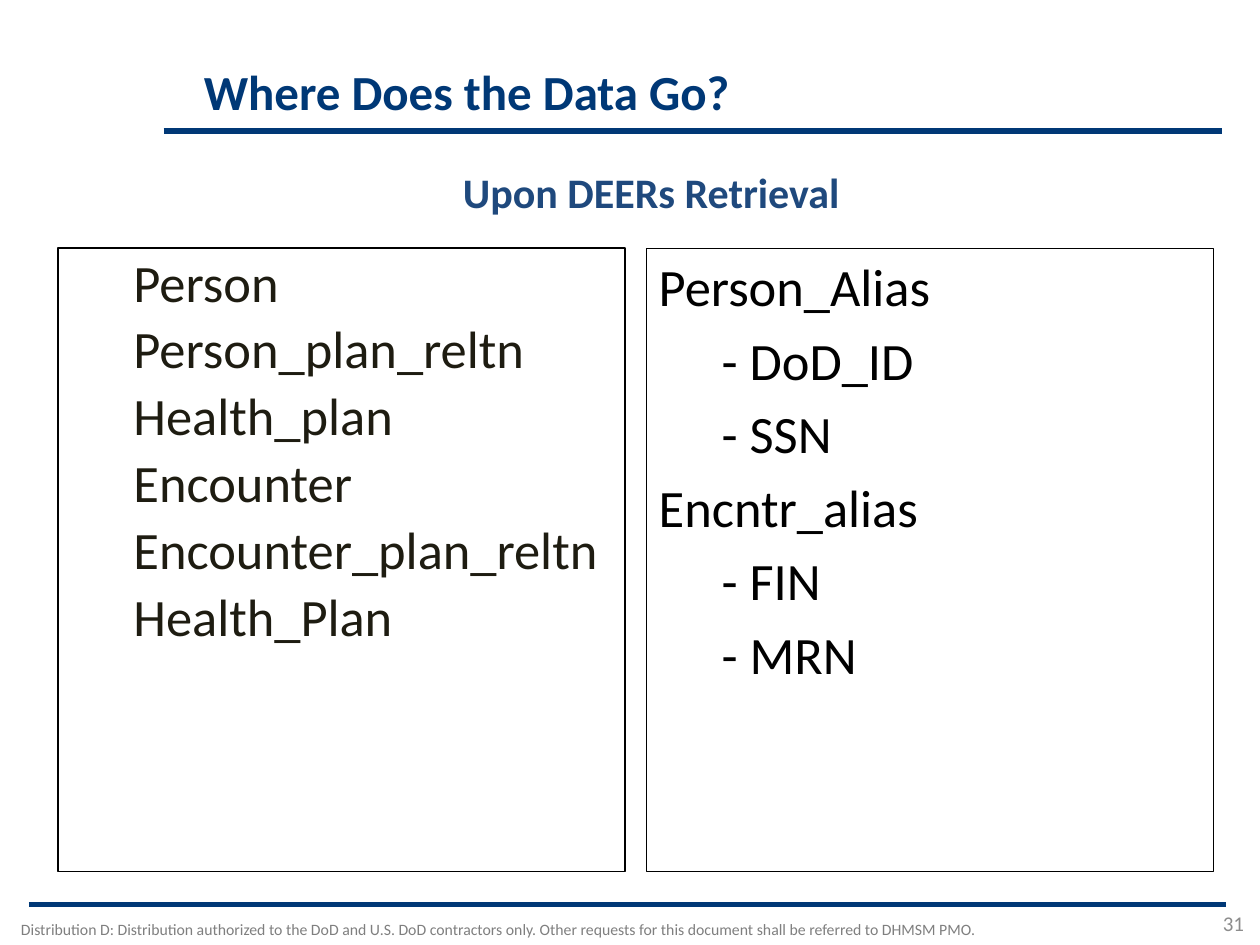
from dataclasses import dataclass

from lxml import etree
from pptx import Presentation
from pptx import util as u
from pptx.dml.color import RGBColor
from pptx.enum import shapes, text
from pptx.oxml import ns


@dataclass(frozen=True)
class Theme:
    """Hold the font, colours and type sizes of the slide."""
    font: str = "Calibri"
    navy: str = "003876"
    blue: str = "1F497D"
    dark: str = "1E1C11"
    black: str = "000000"
    footer_grey: str = "7F7F7F"
    number_grey: str = "8C8C8C"
    title_size: int = 28
    subtitle_size: int = 24
    body_size: int = 30
    number_size: int = 12
    footer_size: int = 9


THEME = Theme()
LEFT, CENTER, RIGHT = text.PP_ALIGN.LEFT, text.PP_ALIGN.CENTER, text.PP_ALIGN.RIGHT
TOP, BOTTOM = text.MSO_ANCHOR.TOP, text.MSO_ANCHOR.BOTTOM
TABLES = ["Person", "Person_plan_reltn", "Health_plan", "Encounter",
          "Encounter_plan_reltn", "Health_Plan"]
ALIASES = ["Person_Alias", "- DoD_ID", "- SSN", "Encntr_alias", "- FIN", "- MRN"]


def add_run(paragraph, words, size, color, bold=False):
    """Append one formatted run to a paragraph."""
    run = paragraph.add_run()
    run.text = words
    run.font.name = THEME.font
    run.font.size = u.Pt(size)
    run.font.bold = bold
    run.font.color.rgb = RGBColor.from_string(color)


def add_label(slide, box, words, size, color, align=LEFT, anchor=TOP, bold=False):
    """Add a single-paragraph text box and return its paragraph."""
    frame = slide.shapes.add_textbox(*map(u.Cm, box)).text_frame
    frame.word_wrap = True
    frame.vertical_anchor = anchor
    paragraph = frame.paragraphs[0]
    paragraph.alignment = align
    add_run(paragraph, words, size, color, bold)
    return paragraph


def add_rule(slide, left, right, y):
    """Add a horizontal navy rule."""
    rule = slide.shapes.add_connector(
        shapes.MSO_CONNECTOR.STRAIGHT, u.Cm(left), u.Cm(y), u.Cm(right), u.Cm(y))
    rule.line.color.rgb = RGBColor.from_string(THEME.navy)
    rule.line.width = u.Pt(3)
    etree.SubElement(rule._element.spPr, ns.qn("a:effectLst"))


def add_panel(slide, left, border, items, color, gap, spacing, is_indented):
    """Add an outlined panel listing the items, indented where the test holds."""
    panel = slide.shapes.add_shape(
        shapes.MSO_SHAPE.RECTANGLE, u.Cm(left), u.Cm(5), u.Cm(11.43), u.Cm(12.57))
    panel.shadow.inherit = False
    panel.fill.background()
    panel.line.color.rgb = RGBColor.from_string(THEME.black)
    panel.line.width = u.Pt(border)
    frame = panel.text_frame
    frame.word_wrap = True
    frame.vertical_anchor = TOP
    for index, item in enumerate(items):
        paragraph = frame.add_paragraph() if index else frame.paragraphs[0]
        paragraph.alignment = LEFT
        paragraph.line_spacing = spacing
        if index:
            paragraph.space_before = u.Pt(gap)
        if is_indented(item):
            paragraph.level = 1
            properties = paragraph._p.get_or_add_pPr()
            properties.set("marL", str(u.Cm(1.27)))
            properties.set("indent", "0")
        add_run(paragraph, item, THEME.body_size, color)


def main():
    """Build and save the slide."""
    presentation = Presentation()
    presentation.slide_width, presentation.slide_height = u.Cm(25.4), u.Cm(19.05)
    slide = presentation.slides.add_slide(presentation.slide_layouts[6])
    add_rule(slide, 0.58, 24.71, 18.24)
    add_rule(slide, 3.3, 24.64, 2.64)
    add_label(slide, (0, 18.42, 20.07, 0.64),
              "Distribution D: Distribution authorized to the DoD and U.S. DoD contractors "
              "only. Other requests for this document shall be referred to DHMSM PMO.",
              THEME.footer_size, THEME.footer_grey, CENTER)
    title = add_label(slide, (3.86, 0.03, 20.8, 2.54), "Where Does the Data Go?",
                      THEME.title_size, THEME.navy, anchor=BOTTOM, bold=True)
    title.line_spacing = 0.9
    add_label(slide, (23.22, 18.19, 2.11, 0.79), "31",
              THEME.number_size, THEME.number_grey, RIGHT, BOTTOM)
    add_panel(slide, 1.17, 1, TABLES, THEME.dark, 4, 0.95, lambda item: True)
    add_panel(slide, 13.03, 0.5, ALIASES, THEME.black, 6, 1.0,
              lambda item: item.startswith("-"))
    add_label(slide, (1.7, 3.23, 22.86, 1.35), "Upon DEERs Retrieval",
              THEME.subtitle_size, THEME.blue, CENTER, bold=True)
    presentation.save("out.pptx")


if __name__ == "__main__":
    main()
